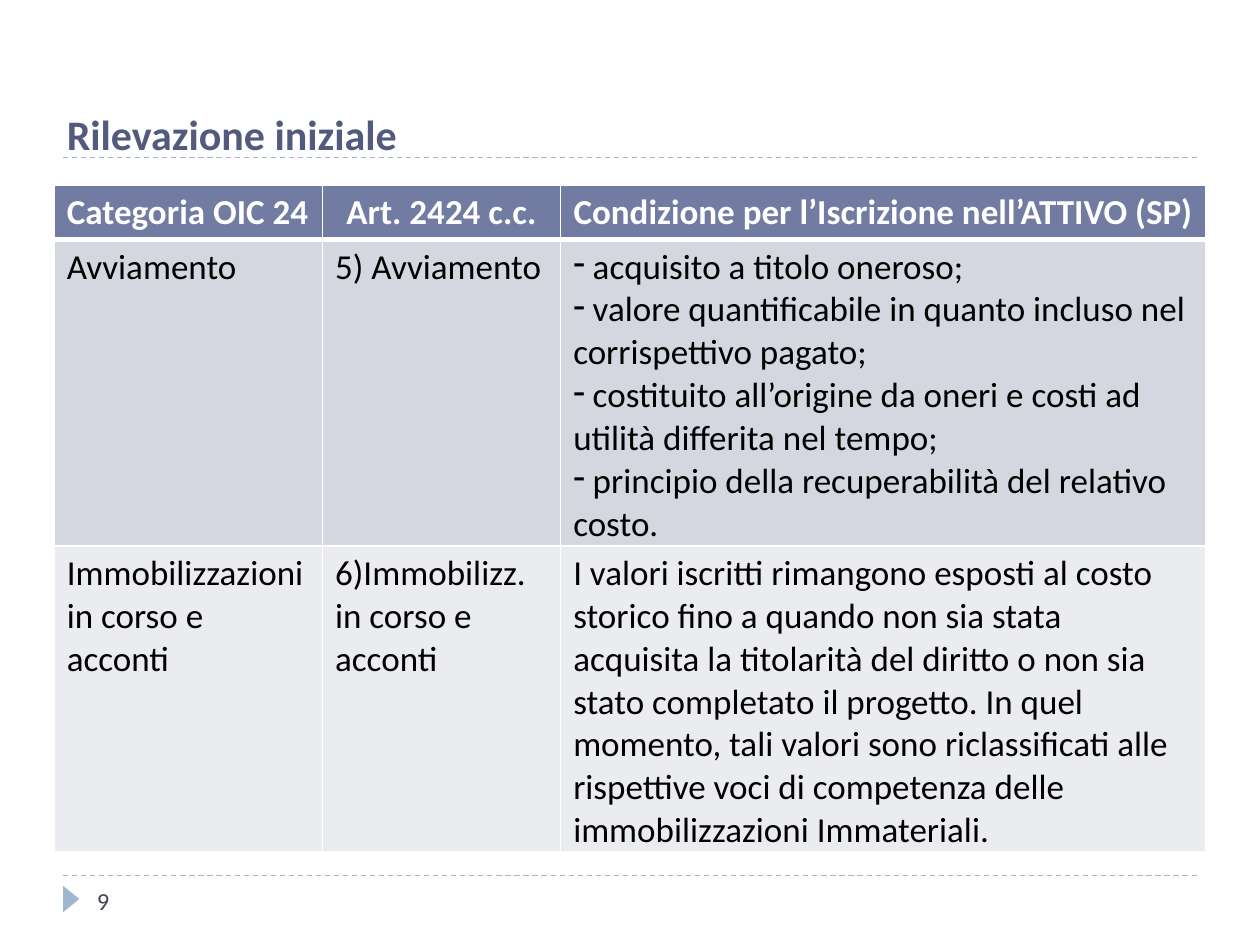
from lxml.etree import SubElement
from pptx import Presentation
from pptx.dml.color import RGBColor
from pptx.enum.dml import MSO_LINE
from pptx.enum.shapes import MSO_CONNECTOR, MSO_SHAPE
from pptx.enum.text import MSO_ANCHOR, PP_ALIGN
from pptx.oxml.ns import qn
from pptx.util import Inches, Pt


def color(value):
    return RGBColor.from_string(value)


def style(para, size, value, bold=False):
    for span in para.runs:
        span.font.name = "Calibri"
        span.font.size = Pt(size)
        span.font.bold = bold
        span.font.color.rgb = color(value)


deck = Presentation()
deck.slide_width, deck.slide_height = Inches(10), Inches(7.5)
slide = deck.slides.add_slide(deck.slide_layouts[5])
shapes = slide.shapes

for y in (6.95, 1.25):
    rule = shapes.add_connector(MSO_CONNECTOR.STRAIGHT, Inches(0.5), Inches(y), Inches(9.5), Inches(y))
    rule.line.color.rgb = color("9FB8CD")
    rule.line.width = Pt(0.75)
    rule.line.dash_style = MSO_LINE.DASH
    SubElement(rule._element.spPr, qn("a:effectLst"))

marker = shapes.add_shape(MSO_SHAPE.ISOSCELES_TRIANGLE, Inches(0.46), Inches(7.07), Inches(0.21), Inches(0.13))
marker.rotation = 90
marker.shadow.inherit = False
marker.fill.solid()
marker.fill.fore_color.rgb = color("9FB8CD")
marker.line.fill.background()

title = shapes.title
title.left, title.top, title.width, title.height = Inches(0.43), Inches(0.81), Inches(8.91), Inches(0.5)
title.text_frame.text = "Rilevazione iniziale"
title.text_frame.vertical_anchor = MSO_ANCHOR.MIDDLE
title.text_frame.paragraphs[0].alignment = PP_ALIGN.LEFT
style(title.text_frame.paragraphs[0], 24, "525B7E", True)

rows = [
    ["Categoria OIC 24", "Art. 2424 c.c.", "Condizione per l’Iscrizione nell’ATTIVO (SP)"],
    [
        "Avviamento",
        "5) Avviamento",
        " acquisito a titolo oneroso;\n"
        " valore quantificabile in quanto incluso nel corrispettivo pagato;\n"
        " costituito all’origine da oneri e costi ad utilità differita nel tempo;\n"
        " principio della recuperabilità del relativo costo.",
    ],
    [
        "Immobilizzazioni in corso e acconti",
        "6)Immobilizz. in corso e acconti",
        "I valori iscritti rimangono esposti al costo storico fino a quando non sia stata "
        "acquisita la titolarità del diritto o non sia stato completato il progetto. In quel "
        "momento, tali valori sono riclassificati alle rispettive voci di competenza delle "
        "immobilizzazioni Immateriali.",
    ],
]
row_fills = ["727CA3", "D5D7E0", "EBECF0"]
row_heights = [0.43, 2.43, 2.43]
column_widths = [2.13, 1.89, 5.12]

table = shapes.add_table(3, 3, Inches(0.43), Inches(1.47), Inches(9.13), Inches(5.3)).table
for column, width in zip(table.columns, column_widths):
    column.width = Inches(width)

for r, texts in enumerate(rows):
    table.rows[r].height = Inches(row_heights[r])
    for c, text in enumerate(texts):
        cell = table.cell(r, c)
        cell.margin_top, cell.margin_bottom = Inches(0.05), 0
        cell.text_frame.text = text
        header = r == 0
        for para in cell.text_frame.paragraphs:
            style(para, 20, "FFFFFF" if header else "000000", header)
            if header and c > 0:
                para.alignment = PP_ALIGN.CENTER
            if para.text.startswith(" "):
                SubElement(para._p.get_or_add_pPr(), qn("a:buChar"), char="-")
        properties = cell._tc.get_or_add_tcPr()
        for side in ("L", "R", "T", "B"):
            points = 3 if (r, side) in ((0, "B"), (1, "T")) else 1
            border = SubElement(properties, qn(f"a:ln{side}"), w=str(Pt(points)))
            SubElement(SubElement(border, qn("a:solidFill")), qn("a:srgbClr"), val="FFFFFF")
        cell.fill.solid()
        cell.fill.fore_color.rgb = color(row_fills[r])

number = shapes.add_textbox(Inches(0.67), Inches(6.95), Inches(2.17), Inches(0.4))
number.text_frame.word_wrap = True
number.text_frame.vertical_anchor = MSO_ANCHOR.MIDDLE
number.text_frame.text = "9"
style(number.text_frame.paragraphs[0], 14, "464653")

deck.save("out.pptx")
